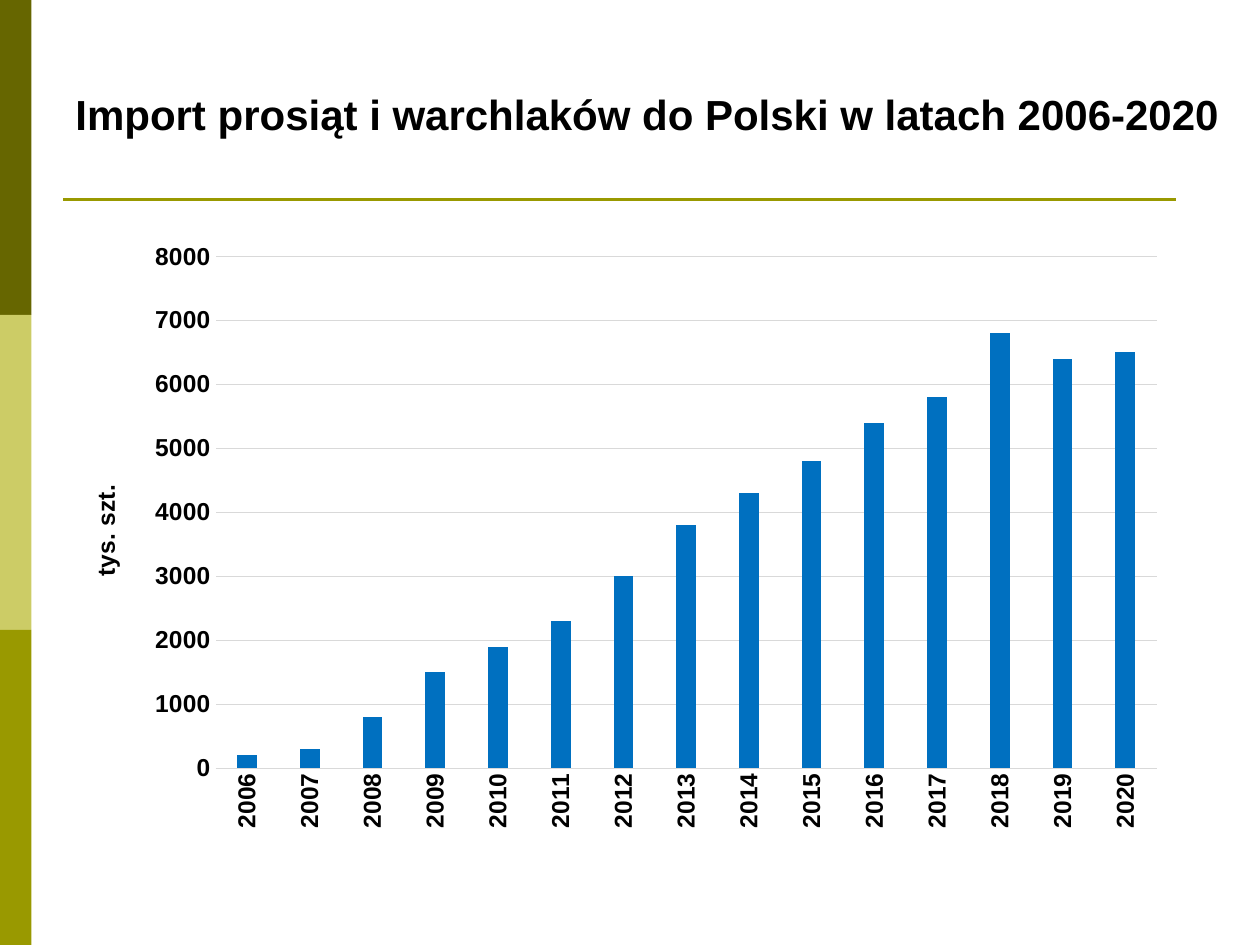
from lxml import etree
from pptx import Presentation
from pptx.chart.data import CategoryChartData
from pptx.dml.color import RGBColor
from pptx.enum.chart import XL_CHART_TYPE as ChartType, XL_TICK_MARK as TickMark
from pptx.enum.shapes import MSO_CONNECTOR as Connector, MSO_SHAPE as Shape
from pptx.enum.text import MSO_ANCHOR as Anchor
from pptx.oxml import parse_xml
from pptx.oxml.ns import nsdecls, qn
from pptx.util import Pt

TITLE = "Import prosiąt i warchlaków do Polski w latach 2006-2020"
AXIS_TITLE = "tys. szt."
IMPORTS = {
    "2006": 200, "2007": 300, "2008": 800, "2009": 1500, "2010": 1900,
    "2011": 2300, "2012": 3000, "2013": 3800, "2014": 4300, "2015": 4800,
    "2016": 5400, "2017": 5800, "2018": 6800, "2019": 6400, "2020": 6500,
}
BAND_COLORS = ["666600", "CCCC66", "999900"]
RULE, BAR, GRID, BLACK = "999900", "0070C0", "D9D9D9", "000000"
FONT = "Arial"
PAGE_WIDTH, PAGE_HEIGHT = 720, 540
BAND_WIDTH = 18
PLOT_LAYOUT = {"x": 0.137, "y": 0.036, "w": 0.845, "h": 0.832}
AXIS_TITLE_LAYOUT = {"x": 0.02, "y": 0.4}


def color(value):
    return RGBColor.from_string(value)


def style_font(font, size, bold=True, tint=BLACK):
    font.name, font.size, font.bold = FONT, Pt(size), bold
    font.color.rgb = color(tint)


def style_line(line, tint, width):
    line.color.rgb, line.width = color(tint), Pt(width)


def add_text(page, text, *, left, top, width, height, size, anchor=Anchor.TOP):
    box = page.shapes.add_textbox(Pt(left), Pt(top), Pt(width), Pt(height))
    frame = box.text_frame
    frame.word_wrap, frame.vertical_anchor = True, anchor
    span = frame.paragraphs[0].add_run()
    span.text = text
    style_font(span.font, size)


def manual_layout(fractions, inner=False):
    """Return a c:layout element that places a chart part by fractions of the chart."""
    target = '<c:layoutTarget val="inner"/>' if inner else ""
    modes = "".join(f'<c:{key}Mode val="edge"/>' for key in "xy")
    sizes = "".join(f'<c:{key} val="{value}"/>' for key, value in fractions.items())
    return parse_xml(f'<c:layout {nsdecls("c")}><c:manualLayout>{target}{modes}{sizes}'
                     "</c:manualLayout></c:layout>")


def set_layout(parent, layout, index):
    for old in parent.findall(qn("c:layout")):
        parent.remove(old)
    parent.insert(index, layout)


def add_bands(page):
    height = PAGE_HEIGHT / len(BAND_COLORS)
    for row, tint in enumerate(BAND_COLORS):
        band = page.shapes.add_shape(Shape.RECTANGLE, 0, Pt(row * height), Pt(BAND_WIDTH), Pt(height))
        band.shadow.inherit = False
        band.fill.solid()
        band.fill.fore_color.rgb = color(tint)
        band.line.fill.background()


def add_rule(page, left, right, top):
    rule = page.shapes.add_connector(Connector.STRAIGHT, Pt(left), Pt(top), Pt(right), Pt(top))
    style_line(rule.line, RULE, 1.5)
    etree.SubElement(rule._element.spPr, qn("a:effectLst"))


def add_import_chart(page, left, top, width, height):
    data = CategoryChartData()
    data.categories = list(IMPORTS)
    data.add_series("Import", list(IMPORTS.values()))
    chart = page.shapes.add_chart(ChartType.COLUMN_CLUSTERED, Pt(left), Pt(top),
                                  Pt(width), Pt(height), data).chart
    chart.has_legend = chart.has_title = False
    style_font(chart.font, 14)

    plot = chart.plots[0]
    plot.gap_width, plot.overlap, plot.vary_by_categories = 219, -27, False
    bars = plot.series[0].format
    bars.fill.solid()
    bars.fill.fore_color.rgb = color(BAR)

    years, amounts = chart.category_axis, chart.value_axis
    for axis in (years, amounts):
        axis.major_tick_mark = axis.minor_tick_mark = TickMark.NONE
        style_font(axis.tick_labels.font, 14)
    years._element.find(qn("c:txPr")).find(qn("a:bodyPr")).set("rot", "-5400000")
    style_line(years.format.line, GRID, 0.75)
    amounts.format.line.fill.background()
    amounts.minimum_scale, amounts.maximum_scale, amounts.major_unit = 0, 8000, 1000
    style_line(amounts.major_gridlines.format.line, GRID, 0.75)

    frame = amounts.axis_title.text_frame
    frame.text = AXIS_TITLE
    style_font(frame.paragraphs[0].runs[0].font, 14)
    frame._txBody.bodyPr.set("rot", "-5400000")
    frame._txBody.bodyPr.set("vert", "horz")
    set_layout(amounts.axis_title._element, manual_layout(AXIS_TITLE_LAYOUT), 1)
    plot_area = chart._chartSpace.chart.plotArea
    set_layout(plot_area, manual_layout(PLOT_LAYOUT, inner=True), 0)


def main():
    deck = Presentation()
    deck.slide_width, deck.slide_height = Pt(PAGE_WIDTH), Pt(PAGE_HEIGHT)
    page = deck.slides.add_slide(deck.slide_layouts[6])
    add_bands(page)
    add_rule(page, left=36, right=672, top=114)
    add_text(page, TITLE, left=36, top=18, width=675, height=65, size=24, anchor=Anchor.BOTTOM)
    add_import_chart(page, left=36, top=134, width=636.5, height=351.5)
    deck.save("out.pptx")


if __name__ == "__main__":
    main()
